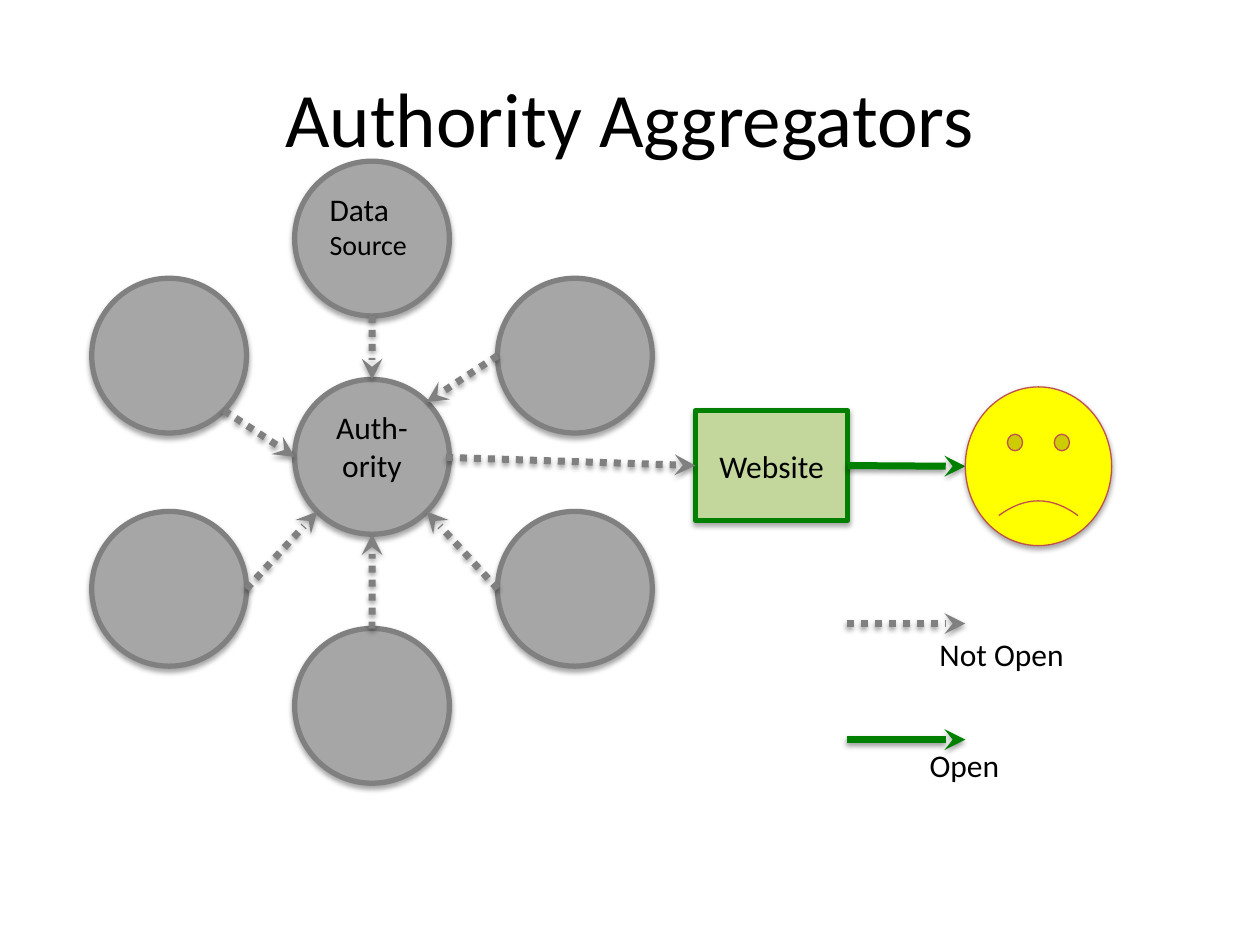
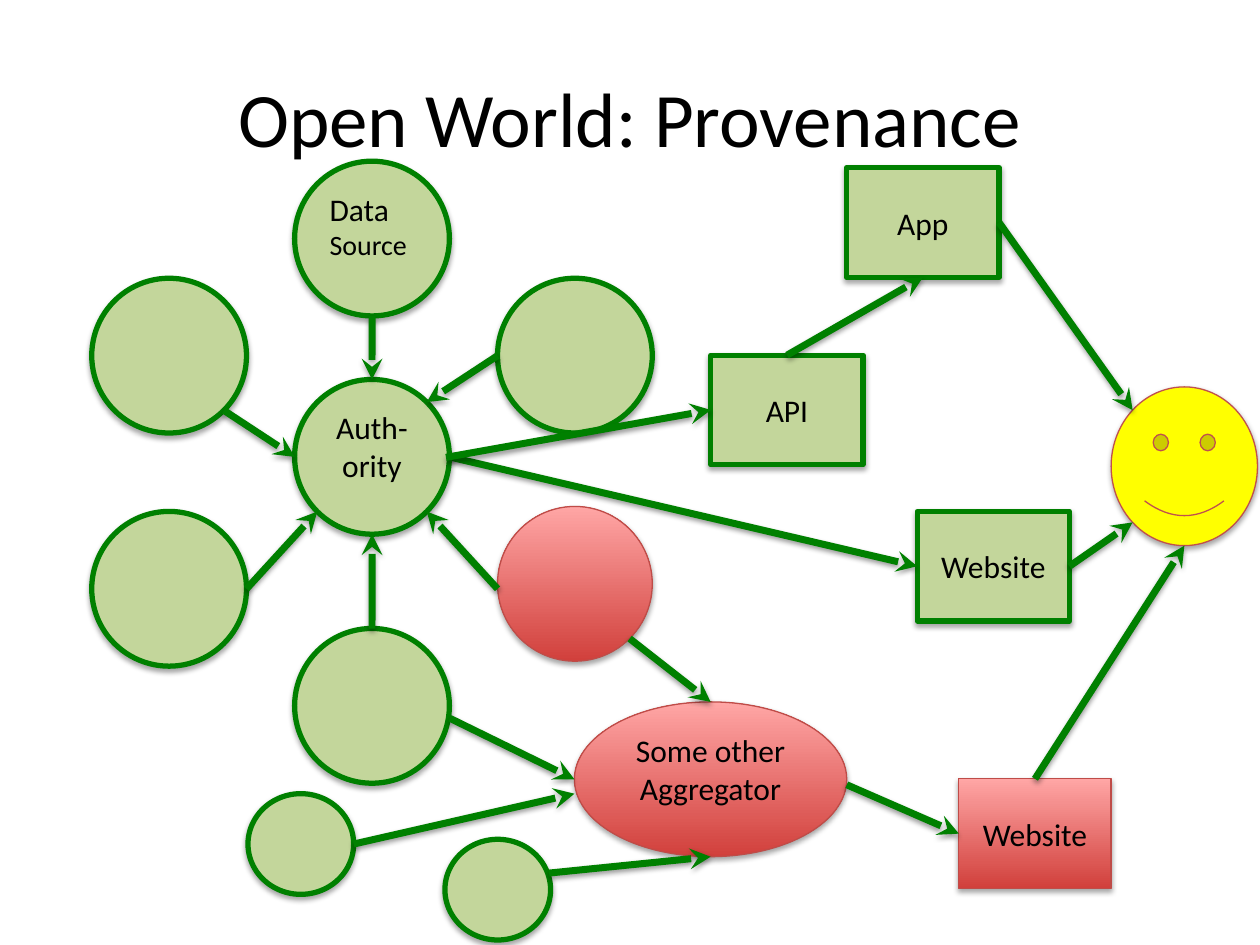
from dataclasses import dataclass
from math import cos, radians, sin

from lxml.etree import SubElement
from pptx import Presentation
from pptx.dml.color import RGBColor
from pptx.enum.dml import MSO_LINE
from pptx.enum.shapes import MSO_CONNECTOR, MSO_SHAPE
from pptx.enum.text import MSO_ANCHOR as Anchor, MSO_AUTO_SIZE as AutoSize, PP_ALIGN as Align
from pptx.oxml.ns import qn
from pptx.util import Cm, Emu, Pt


@dataclass(frozen=True)
class Look:
    """Fill (one colour, or bottom and top of a gradient), outline and its width."""
    fill: tuple
    line: str
    width: float = 3


@dataclass(frozen=True)
class Theme:
    font: str = "Calibri"
    text: str = "000000"
    title_size: int = 44
    body_size: int = 18
    small_size: int = 16
    arrow_width: int = 4
    open_line: str = "008000"
    closed_line: str = "808080"
    closed: Look = Look(("A6A6A6",), "808080")
    open: Look = Look(("C3D69B",), "008000")
    other: Look = Look(("D1403C", "FFA6A5"), "BF4C48", 0.75)
    face: Look = Look(("FFFF00",), "C0504D", 0.75)


@dataclass(frozen=True)
class Side:
    """Middle of a box's side: 0 top, 1 left, 2 bottom, 3 right."""
    box: object
    index: int


THEME = Theme()
TOP, LEFT, BOTTOM, RIGHT = range(4)

# Frames are left, top, width, height in centimetres.
DIAMETER = 3.12
COLUMNS = [1.85 + 4.09 * step for step in range(3)]
UPPER, LOWER = 5.61, 10.31


def circle(column, top):
    return COLUMNS[column], top, DIAMETER, DIAMETER


HUB = circle(1, 7.65)
SOURCE = circle(1, 3.25)
BOTTOM_SOURCE = circle(1, 12.67)
LOWER_RIGHT = circle(2, LOWER)
OTHER_SOURCE = circle(2, LOWER - 0.1)
HUB_EXIT = (8.99, 9.22)
# Each source with the angle its spoke leaves at and the angle it meets the hub at.
SPOKES = [
    (SOURCE, 90, 270),
    (circle(2, UPPER), 180, 315),
    (LOWER_RIGHT, 180, 45),
    (BOTTOM_SOURCE, 270, 90),
    (circle(0, LOWER), 0, 135),
    (circle(0, UPPER), 45, 180),
]


def rim(frame, angle):
    """Point of the ellipse in the frame, angle clockwise from the right."""
    left, top, width, height = frame
    turn = radians(angle)
    return left + width / 2 * (1 + cos(turn)), top + height / 2 * (1 + sin(turn))


def write(frame, text, size=THEME.body_size, align=Align.CENTER, anchor=Anchor.MIDDLE, wrap=True):
    """Fill a text frame with a string, or with a list of (string, size)."""
    frame.word_wrap = wrap
    frame.vertical_anchor = anchor
    para = frame.paragraphs[0]
    para.alignment = align
    for part, part_size in [(text, size)] if isinstance(text, str) else text:
        span = para.add_run()
        span.text = part
        span.font.name = THEME.font
        span.font.size = Pt(part_size)
        span.font.color.rgb = RGBColor.from_string(THEME.text)


def cast_shadow(shape, opacity, distance):
    effects = SubElement(shape._element.spPr, qn("a:effectLst"))
    shadow = SubElement(effects, qn("a:outerShdw"), blurRad=str(Pt(3.1)),
                        dist=str(Pt(distance)), dir="5400000", rotWithShape="0")
    colour = SubElement(shadow, qn("a:srgbClr"), val="000000")
    SubElement(colour, qn("a:alpha"), val=str(opacity * 1000))


class Painter:
    def __init__(self, deck, theme):
        self.deck = deck
        self.theme = theme
        self.page = None

    def start(self, title):
        self.page = self.deck.slides.add_slide(self.deck.slide_layouts[6])
        self.label((1.27, 0.76, 22.86, 3.18), title, size=self.theme.title_size)

    def label(self, frame, text, grow=False, **style):
        box = self.page.shapes.add_textbox(*map(Cm, frame))
        write(box.text_frame, text, **style)
        if grow:
            box.text_frame.auto_size = AutoSize.SHAPE_TO_FIT_TEXT

    def shape(self, kind, frame, look, text=None, **style):
        shape = self.page.shapes.add_shape(kind, *map(Cm, frame))
        if len(look.fill) == 1:
            shape.fill.solid()
            shape.fill.fore_color.rgb = RGBColor.from_string(look.fill[0])
        else:
            shape.fill.gradient()
            shape.fill.gradient_angle = 90
            for stop, colour in zip(shape.fill.gradient_stops, look.fill):
                stop.color.rgb = RGBColor.from_string(colour)
        shape.line.color.rgb = RGBColor.from_string(look.line)
        shape.line.width = Pt(look.width)
        cast_shadow(shape, 35, 1.8)
        if text:
            write(shape.text_frame, text, **style)
        return shape

    def oval(self, frame, look, text=None, align=Align.CENTER):
        self.shape(MSO_SHAPE.OVAL, frame, look, text, align=align, anchor=Anchor.TOP)

    def box(self, left, top, text, look):
        return self.shape(MSO_SHAPE.RECTANGLE, (left, top, 3.07, 2.21), look, text)

    def face(self, frame, smile):
        face = self.shape(MSO_SHAPE.SMILEY_FACE, frame, self.theme.face)
        face.adjustments[0] = smile

    def arrow(self, start, end, is_open=True):
        """Arrow between two ends, each a point in centimetres or a Side."""
        ends = [Emu(0) if isinstance(place, Side) else Cm(place[axis])
                for place in (start, end) for axis in (0, 1)]
        arrow = self.page.shapes.add_connector(MSO_CONNECTOR.STRAIGHT, *ends)
        if isinstance(start, Side):
            arrow.begin_connect(start.box, start.index)
        if isinstance(end, Side):
            arrow.end_connect(end.box, end.index)
        colour = self.theme.open_line if is_open else self.theme.closed_line
        arrow.line.color.rgb = RGBColor.from_string(colour)
        arrow.line.width = Pt(self.theme.arrow_width)
        if not is_open:
            arrow.line.dash_style = MSO_LINE.ROUND_DOT
        SubElement(arrow.line._get_or_add_ln(), qn("a:tailEnd"), type="stealth")
        cast_shadow(arrow, 38, 1.6)

    def network(self, is_open):
        """Six data sources feeding the authority."""
        theme = self.theme
        look = theme.open if is_open else theme.closed
        for frame, _, _ in SPOKES:
            if frame == SOURCE:
                text = [("Data ", theme.body_size), ("Source", theme.small_size)]
                self.oval(frame, look, text, align=Align.LEFT)
            elif is_open and frame == LOWER_RIGHT:
                self.oval(OTHER_SOURCE, theme.other)
            else:
                self.oval(frame, look)
        self.oval(HUB, look, "Auth-ority")
        for frame, leave, meet in SPOKES:
            self.arrow(rim(frame, leave), rim(HUB, meet), is_open)


def authority_aggregators(painter):
    painter.start("Authority Aggregators")
    painter.network(is_open=False)
    website = painter.box(14.02, 8.28, "Website", THEME.open)
    user = (19.46, 7.8, 2.95, 3.2)
    painter.arrow(Side(website, RIGHT), rim(user, 180))
    painter.arrow(HUB_EXIT, Side(website, LEFT), is_open=False)
    painter.face(user, -0.047)

    for height, is_open in ((12.57, False), (14.91, True)):
        painter.arrow((17.07, height), (19.46, height), is_open)
    key = dict(grow=True, align=Align.LEFT, anchor=Anchor.TOP)
    painter.label((18.49, 14.91, 1.93, 1.8), "Open", wrap=False, **key)
    painter.label((18.69, 12.67, 3.71, 1.02), "Not Open", **key)


def open_world(painter):
    painter.start("Open World: Provenance")
    user = (22.4, 7.8, 2.95, 3.2)
    api = painter.box(14.33, 7.16, "API", THEME.open)
    painter.face(user, 0.047)
    website = painter.box(18.49, 10.31, "Website", THEME.open)
    app = painter.box(17.07, 3.38, "App", THEME.open)
    other_website = painter.box(19.33, 15.7, "Website", THEME.other)
    painter.arrow(rim(HUB, 0), Side(website, LEFT))
    painter.arrow(Side(app, RIGHT), rim(user, 225))
    painter.arrow(Side(api, TOP), Side(app, BOTTOM))
    painter.arrow(Side(website, RIGHT), rim(user, 135))
    painter.arrow(Side(other_website, TOP), rim(user, 90))

    painter.network(is_open=True)
    painter.arrow(HUB_EXIT, Side(api, LEFT))

    aggregator = (11.58, 14.15, 5.49, DIAMETER)
    small_source, last_source = (5, 16, 2.13, 2.03), (8.97, 16.92, 2.13, 2.03)
    painter.oval(aggregator, THEME.other, "Some other Aggregator")
    painter.oval(small_source, THEME.open)
    painter.oval(last_source, THEME.open)
    painter.arrow((9.07, 14.48), rim(aggregator, 180))
    painter.arrow(rim(OTHER_SOURCE, 45), rim(aggregator, 270))
    painter.arrow(rim(small_source, 0), (11.58, 16))
    painter.arrow((11.07, 17.6), rim(aggregator, 90))
    painter.arrow((17.07, 15.82), Side(other_website, LEFT))


def main():
    deck = Presentation()
    deck.slide_width, deck.slide_height = Cm(25.4), Cm(19.05)
    painter = Painter(deck, THEME)
    authority_aggregators(painter)
    open_world(painter)
    deck.save("out.pptx")


if __name__ == "__main__":
    main()
